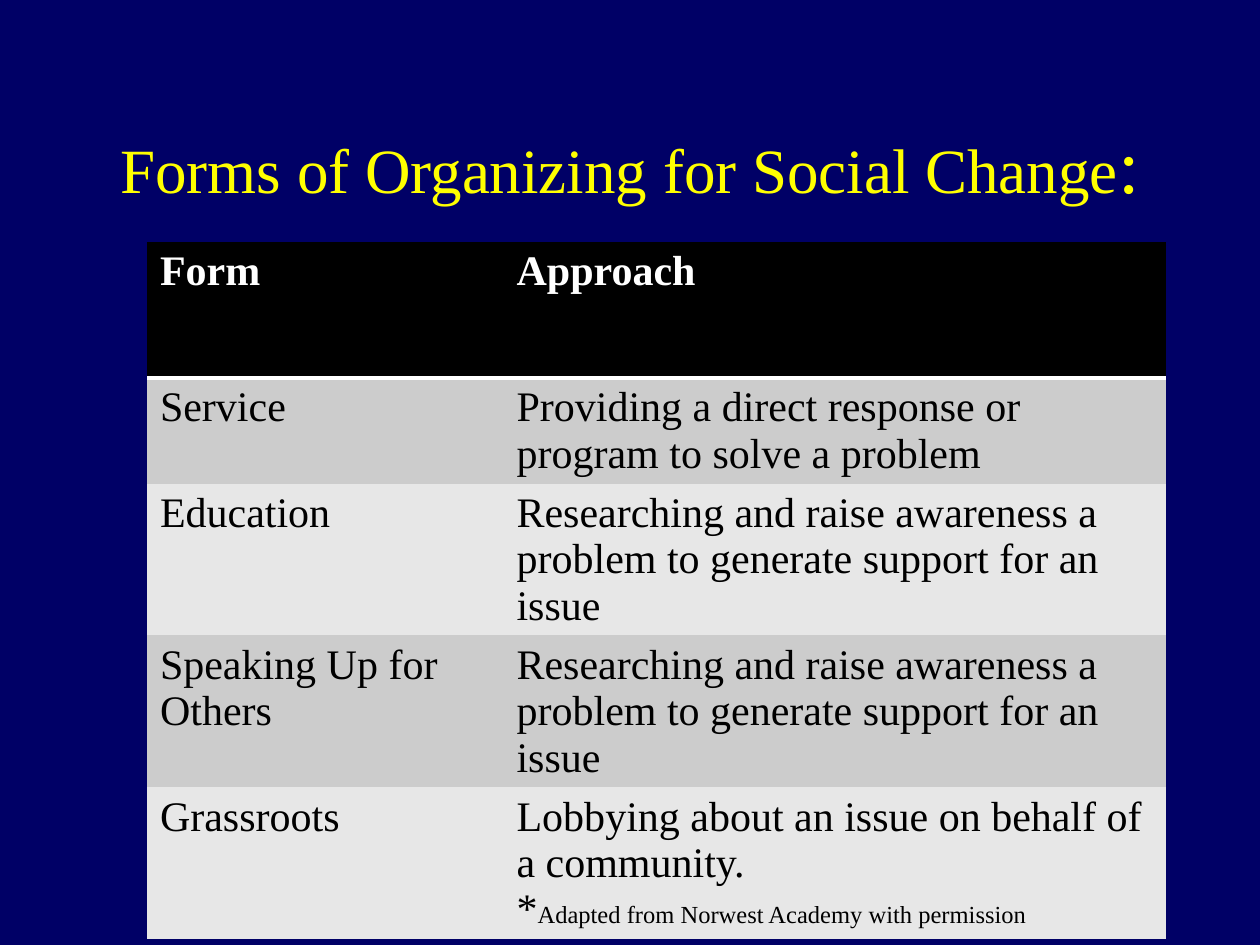
"""Build a slide with a table of forms of organizing for social change."""
from lxml import etree
from pptx import Presentation
from pptx.dml.color import RGBColor
from pptx.enum import text
from pptx.oxml import ns
from pptx.util import Inches, Pt

NAVY = RGBColor(0x00, 0x00, 0x66)
YELLOW = RGBColor(0xFF, 0xFF, 0x00)
BLACK = RGBColor(0x00, 0x00, 0x00)
WHITE = RGBColor(0xFF, 0xFF, 0xFF)
DARK_BAND = RGBColor(0xCC, 0xCC, 0xCC)
LIGHT_BAND = RGBColor(0xE7, 0xE7, 0xE7)
PLAIN_STYLE = "{2D5ABB26-0587-4C30-8999-92F81FD0307C}"


def add_text(paragraph, wording, size=24, color=BLACK, bold=False):
    run = paragraph.add_run()
    run.text = wording
    run.font.name = "Times New Roman"
    run.font.size = Pt(size)
    run.font.color.rgb = color
    run.font.bold = bold


def add_bottom_border(cell, color, width):
    line = etree.Element(ns.qn("a:lnB"), w=str(Pt(width)))
    fill = etree.SubElement(line, ns.qn("a:solidFill"))
    etree.SubElement(fill, ns.qn("a:srgbClr"), val=str(color))
    cell._tc.get_or_add_tcPr().insert(0, line)


deck = Presentation()
deck.slide_width, deck.slide_height = Inches(10), Inches(7.5)
slide = deck.slides.add_slide(deck.slide_layouts[5])
slide.background.fill.solid()
slide.background.fill.fore_color.rgb = NAVY

heading = slide.shapes.title
heading.left, heading.top = Inches(0.75), Inches(0.67)
heading.width, heading.height = Inches(8.5), Inches(1.25)
heading.text_frame.vertical_anchor = text.MSO_ANCHOR.MIDDLE
heading_line = heading.text_frame.paragraphs[0]
heading_line.alignment = text.PP_ALIGN.CENTER
add_text(heading_line, "Forms of Organizing for Social Change", size=36, color=YELLOW)
add_text(heading_line, ":", size=44, color=YELLOW)

awareness = "Researching and raise awareness a problem to generate support for an issue"
entries = [
    ("Form", "Approach"),
    ("Service", "Providing a direct response or program to solve a problem"),
    ("Education", awareness),
    ("Speaking Up for Others", awareness),
    ("Grassroots", "Lobbying about an issue on behalf of a community."),
]
forms = slide.shapes.add_table(
    len(entries), 2, Inches(1.17), Inches(1.92), Inches(8.08), Inches(4.54)
).table
forms.first_row = forms.horz_banding = False
forms._tbl.tblPr.find(ns.qn("a:tableStyleId")).text = PLAIN_STYLE
for column, width in zip(forms.columns, (2.83, 5.25)):
    column.width = Inches(width)
for row, height in zip(forms.rows, (1.08, 0.58, 0.72, 1.08, 1.08)):
    row.height = Inches(height)

for row_number, entry in enumerate(entries):
    is_header = row_number == 0
    band = BLACK if is_header else (LIGHT_BAND, DARK_BAND)[row_number % 2]
    for cell, wording in zip(forms.rows[row_number].cells, entry):
        cell.fill.solid()
        cell.fill.fore_color.rgb = band
        add_text(cell.text_frame.paragraphs[0], wording,
                 color=WHITE if is_header else BLACK, bold=is_header)
        if is_header:
            add_bottom_border(cell, WHITE, 2)

credit = forms.cell(len(entries) - 1, 1).text_frame.add_paragraph()
add_text(credit, "*")
add_text(credit, "Adapted from Norwest Academy with permission", size=14)

deck.save("out.pptx")
